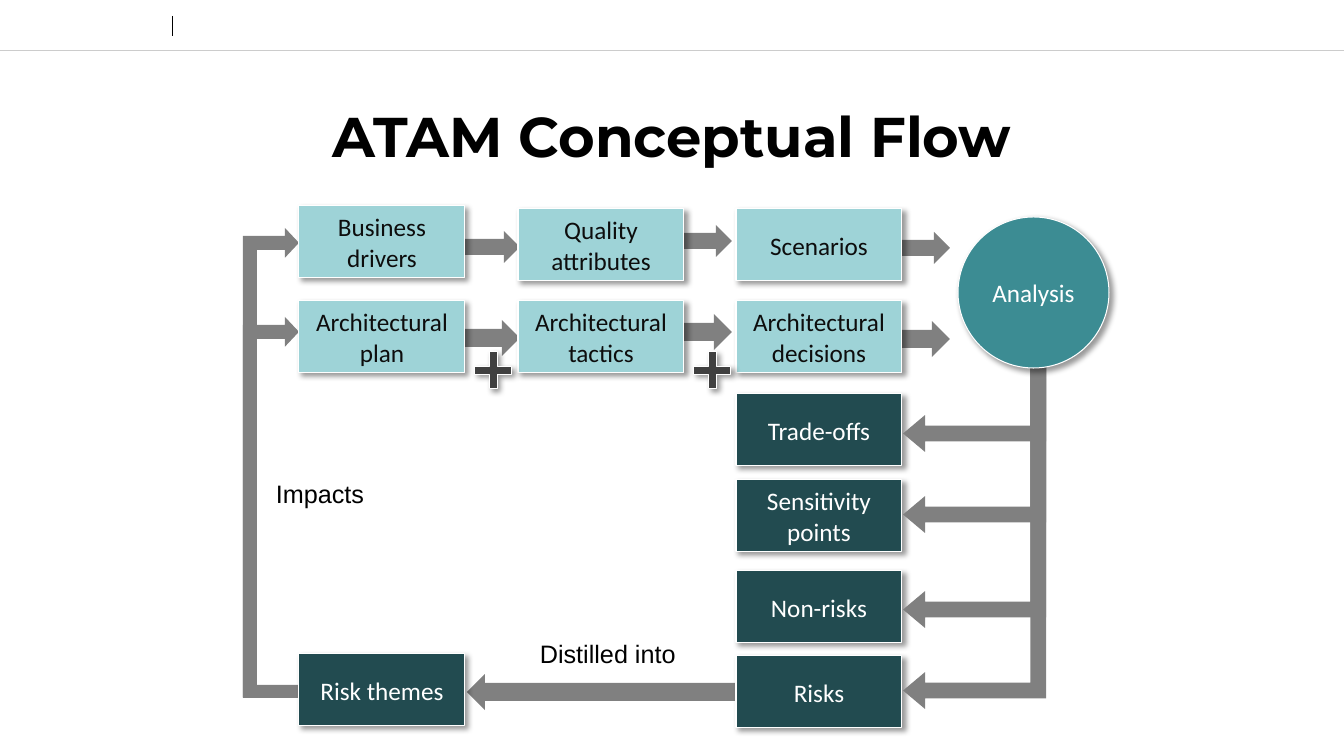
from lxml.etree import SubElement
from pptx import Presentation
from pptx.dml.color import RGBColor
from pptx.enum.shapes import MSO_CONNECTOR, MSO_SHAPE
from pptx.enum.text import MSO_ANCHOR, MSO_AUTO_SIZE, PP_ALIGN
from pptx.oxml.ns import qn
from pptx.util import Emu, Pt

PX = 914400 / 100.8
SLIDE = (1344, 756)

GREY, PALE, DARK, TEAL = "808080", "9ED3D7", "224B50", "3C8C93"
WHITE, BLACK, INK, CROSS = "FFFFFF", "000000", "0D0D0D", "404040"

TITLE = ("ATAM Conceptual Flow", (0, 93, 1344, 84))
HEADER_LINES = [((0, 50), (1344, 50), "CCCCCC", 0.25),
                ((172, 16), (172, 36), BLACK, 0.5)]
LABELS = [("Impacts", (266, 473, 110, 40)),
          ("Distilled into", (530, 633, 157, 40))]

COLUMNS = (299, 518, 736)
BOX_SIZE = (166, 72)
BOXES = [
    ("Scenarios", 2, 209, PALE, INK),
    ("Quality attributes", 1, 209, PALE, INK),
    ("Business drivers", 0, 206, PALE, INK),
    ("Architectural decisions", 2, 301, PALE, INK),
    ("Architectural tactics", 1, 301, PALE, INK),
    ("Architectural plan", 0, 301, PALE, INK),
    ("Trade-offs", 2, 394, DARK, WHITE),
    ("Sensitivity points", 2, 480, DARK, WHITE),
    ("Non-risks", 2, 571, DARK, WHITE),
    ("Risks", 2, 656, DARK, WHITE),
    ("Risk themes", 0, 654, DARK, WHITE),
]
ANALYSIS = ("Analysis", (958, 217, 151, 151))

FLOW_ARROWS = [(450, 231), (662, 225), (880, 232)]
FLOW_DROP, FLOW_WIDTH, FLOW_HEIGHTS = 89, 70, (32, 36)
DISTILL_ARROW = (467, 674, 309, 36)
IMPACT_BASE = (245, 685, 103, 13)
IMPACT_ARROWS = {"left": 243, "width": 56, "turn": 90, "adjust": (0.25, 0.265, 0.25),
                 "spans": [(317, 698), (228, 697)]}
RESULT_ARROWS = {"left": 903, "width": 143, "turn": 270, "adjust": (0.11, 0.129, 0.154),
                 "spans": [(240, 709), (301, 533), (301, 628), (238, 452)]}
PLUSES = [(694, 352, 37, 37), (475, 352, 37, 37)]


def px(*lengths):
    return [Emu(round(length * PX)) for length in lengths]


def color(value):
    return RGBColor.from_string(value)


def write(frame, text, size, font, ink, align, bold=False):
    paragraph = frame.paragraphs[0]
    paragraph.alignment = align
    run = paragraph.add_run()
    run.text = text
    run.font.size = Pt(size)
    run.font.name = font
    run.font.bold = bold
    run.font.color.rgb = color(ink)


def add_plain(kind, box, fill, adjust=(), turn=0, flip=False):
    shape = slide.shapes.add_shape(kind, *px(*box))
    shape.shadow.inherit = False
    shape.fill.solid()
    shape.fill.fore_color.rgb = color(fill)
    shape.line.fill.background()
    for index, value in enumerate(adjust):
        shape.adjustments[index] = value
    shape.rotation = turn
    if flip:
        shape.element.spPr.get_or_add_xfrm().set("flipH", "1")
    return shape


def add_raised(kind, box, fill, adjust=(), text="", ink=WHITE):
    shape = add_plain(kind, box, fill, adjust)
    shape.line.color.rgb = color(WHITE)
    shape.line.width = Pt(0.75)
    effects = shape.element.spPr.find(qn("a:effectLst"))
    shadow = SubElement(effects, qn("a:outerShdw"), blurRad=str(Pt(4)), dist=str(Pt(3)),
                        dir="2700000", algn="tl", rotWithShape="0")
    tint = SubElement(shadow, qn("a:srgbClr"), val=BLACK)
    SubElement(tint, qn("a:alpha"), val="40000")
    if text:
        frame = shape.text_frame
        frame.word_wrap = True
        frame.vertical_anchor = MSO_ANCHOR.MIDDLE
        write(frame, text, 18, "Calibri", ink, PP_ALIGN.CENTER)


def add_bent_arrows(arrows):
    width = arrows["width"]
    for top, bottom in arrows["spans"]:
        length = bottom - top
        inset = (width - length) / 2
        box = (arrows["left"] + inset, top - inset, length, width)
        add_plain(MSO_SHAPE.BENT_UP_ARROW, box, GREY, arrows["adjust"], arrows["turn"], True)


prs = Presentation()
prs.slide_width, prs.slide_height = px(*SLIDE)
slide = prs.slides.add_slide(prs.slide_layouts[6])

for start, end, stroke, weight in HEADER_LINES:
    rule = slide.shapes.add_connector(MSO_CONNECTOR.STRAIGHT, *px(*start, *end))
    rule.line.color.rgb = color(stroke)
    rule.line.width = Pt(weight)
    SubElement(rule.element.spPr, qn("a:effectLst"))

add_bent_arrows(IMPACT_ARROWS)
add_plain(MSO_SHAPE.RECTANGLE, IMPACT_BASE, GREY)
add_plain(MSO_SHAPE.RIGHT_ARROW, DISTILL_ARROW, GREY, flip=True)

for text, box in LABELS:
    label = slide.shapes.add_textbox(*px(*box)).text_frame
    label.word_wrap = False
    label.auto_size = MSO_AUTO_SIZE.SHAPE_TO_FIT_TEXT
    write(label, text, 18, "Arial", BLACK, PP_ALIGN.LEFT)

title_text, title_box = TITLE
title = slide.shapes.add_textbox(*px(*title_box)).text_frame
title.word_wrap = True
title.vertical_anchor = MSO_ANCHOR.MIDDLE
write(title, title_text, 40, "Montserrat", BLACK, PP_ALIGN.CENTER, True)

for left, top in FLOW_ARROWS:
    for row, height in enumerate(FLOW_HEIGHTS):
        box = (left, top + row * FLOW_DROP, FLOW_WIDTH, height)
        add_plain(MSO_SHAPE.RIGHT_ARROW, box, GREY)

for text, column, top, fill, ink in BOXES:
    box = (COLUMNS[column], top, *BOX_SIZE)
    add_raised(MSO_SHAPE.RECTANGLE, box, fill, text=text, ink=ink)

add_bent_arrows(RESULT_ARROWS)
analysis_text, analysis_box = ANALYSIS
add_raised(MSO_SHAPE.OVAL, analysis_box, TEAL, text=analysis_text)
for box in PLUSES:
    add_raised(MSO_SHAPE.CROSS, box, CROSS, (0.39,))

prs.save("out.pptx")
